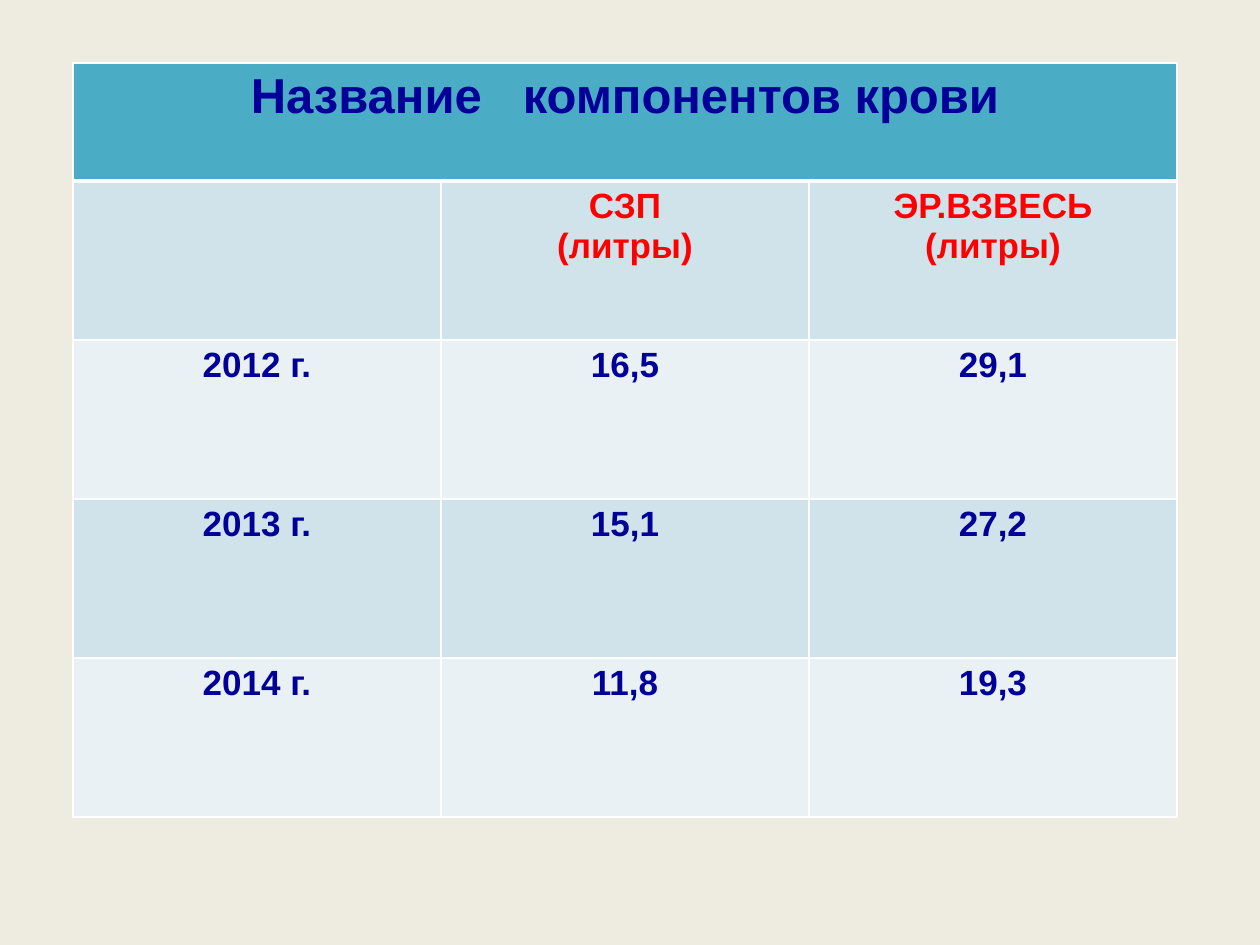
from lxml.etree import SubElement
from pptx import Presentation
from pptx.dml.color import RGBColor
from pptx.enum.text import PP_ALIGN as Align
from pptx.oxml.ns import qn
from pptx.util import Pt

# Content
TITLE = ("Название", " ", "компонентов крови")
HEADINGS = ["", "СЗП\n(литры)", "ЭР.ВЗВЕСЬ\n(литры)"]
YEARS = [
    ["2012 г.", "16,5", "29,1"],
    ["2013 г.", "15,1", "27,2"],
    ["2014 г.", "11,8", "19,3"],
]

# Style, lengths in px at 126 to the inch
PX = 914400 / 126
FONT = "Arial"
NAVY, RED, WHITE = "000099", "FF0000", "FFFFFF"
BACKGROUND, TITLE_FILL = "EEECE1", "4BACC6"
BANDS = ["D0E3EA", "E9F1F5"]
LEFT, TOP, COLUMN_WIDTH = 73, 63, 368
TITLE_HEIGHT, ROW_HEIGHT = 118, 159
TITLE_GAP = 15.6  # extra points between the title's first two words


def px(value):
    return round(value * PX)


def color(value):
    return RGBColor.from_string(value)


def set_borders(cell, top=1, bottom=1):
    properties = cell._tc.get_or_add_tcPr()
    for side, width in (("L", 1), ("R", 1), ("T", top), ("B", bottom)):
        line = SubElement(properties, qn(f"a:ln{side}"), w=str(Pt(width)))
        fill = SubElement(line, qn("a:solidFill"))
        SubElement(fill, qn("a:srgbClr"), val=WHITE)


def style_cell(cell, fill, size, text_color, top=1, bottom=1):
    set_borders(cell, top, bottom)
    cell.fill.solid()
    cell.fill.fore_color.rgb = color(fill)
    for paragraph in cell.text_frame.paragraphs:
        paragraph.alignment = Align.CENTER
        paragraph.font.size = Pt(size)
        for run in paragraph.runs:
            run.font.name = FONT
            run.font.size = Pt(size)
            run.font.bold = True
            run.font.color.rgb = color(text_color)


presentation = Presentation()
presentation.slide_width, presentation.slide_height = px(1260), px(945)
slide = presentation.slides.add_slide(presentation.slide_layouts[6])
slide.background.fill.solid()
slide.background.fill.fore_color.rgb = color(BACKGROUND)

# Table grid
body = [HEADINGS] + YEARS
column_count = len(HEADINGS)
table = slide.shapes.add_table(
    len(body) + 1, column_count, px(LEFT), px(TOP),
    px(COLUMN_WIDTH * column_count), px(TITLE_HEIGHT + ROW_HEIGHT * len(body)),
).table
for column in table.columns:
    column.width = px(COLUMN_WIDTH)
for index, row in enumerate(table.rows):
    row.height = px(ROW_HEIGHT if index else TITLE_HEIGHT)

# Title row, with a widened space after the first word
title = table.cell(0, 0)
title.merge(table.cell(0, column_count - 1))
for text in TITLE:
    title.text_frame.paragraphs[0].add_run().text = text
for column_index in range(column_count):
    style_cell(table.cell(0, column_index), TITLE_FILL, 28, NAVY, bottom=3)
gap = title.text_frame.paragraphs[0].runs[1]
gap.font._element.set("spc", str(round(TITLE_GAP * 100)))

# Heading row and years, in alternating bands
for row_index, values in enumerate(body):
    is_heading = row_index == 0
    for column_index, value in enumerate(values):
        cell = table.cell(row_index + 1, column_index)
        cell.text_frame.text = value
        style_cell(cell, BANDS[row_index % 2], 20, RED if is_heading else NAVY,
                   top=3 if is_heading else 1)

presentation.save("out.pptx")
